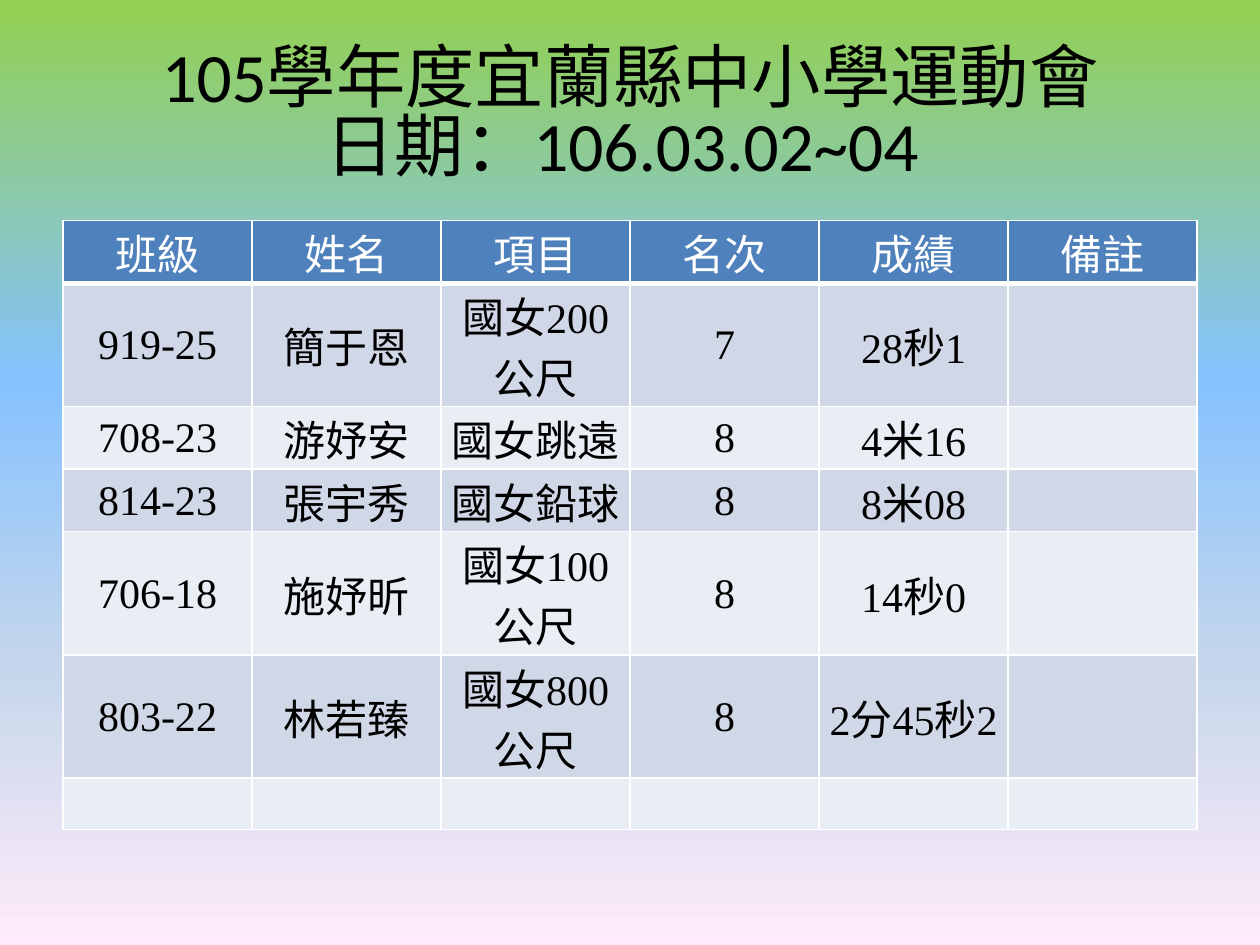
from lxml.etree import SubElement
from pptx import Presentation
from pptx.dml.color import RGBColor
from pptx.enum.text import MSO_ANCHOR, MSO_AUTO_SIZE, PP_ALIGN
from pptx.oxml import parse_xml
from pptx.oxml.ns import nsdecls, qn
from pptx.util import Cm, Pt

TITLE = ["105學年度宜蘭縣中小學運動會", "日期：106.03.02~04 "]
ROWS = [
    ["班級", "姓名", "項目", "名次", "成績", "備註"],
    ["919-25", "簡于恩", "國女200公尺", "7", "28秒1", ""],
    ["708-23", "游妤安", "國女跳遠", "8", "4米16", ""],
    ["814-23", "張宇秀", "國女鉛球", "8", "8米08", ""],
    ["706-18", "施妤昕", "國女100公尺", "8", "14秒0", ""],
    ["803-22", "林若臻", "國女800公尺", "8", "2分45秒2", ""],
    [""] * 6,
]
STOPS = [(0, "92D050"), (40, "85C2FF"), (70, "C4D6EB"), (100, "FFEBFA")]
HEAD, BANDS = "4F81BD", ["D0D8E8", "E9EDF4"]
WHITE, BLACK = "FFFFFF", "000000"


def color(code):
    return RGBColor.from_string(code)


def add_run(para, text, font, size, code):
    run = para.add_run()
    run.text = text
    run.font.name = font
    run.font.size = Pt(size)
    run.font.color.rgb = color(code)


def set_back(slide):
    fill = slide.background.fill
    fill.gradient()
    fill.gradient_angle = 270
    stops = fill.gradient_stops[0]._gs.getparent()
    for stop in list(stops):
        stops.remove(stop)
    for pos, code in STOPS:
        stop = SubElement(stops, qn("a:gs"), pos=str(pos * 1000))
        SubElement(stop, qn("a:srgbClr"), val=code)


def set_title(slide):
    title = slide.shapes.title
    title.left, title.top = Cm(1.27), Cm(0.76)
    title.width, title.height = Cm(22.86), Cm(3.18)
    frame = title.text_frame
    frame.word_wrap = True
    frame.auto_size = MSO_AUTO_SIZE.NONE
    frame.vertical_anchor = MSO_ANCHOR.MIDDLE
    para = frame.paragraphs[0]
    para.alignment = PP_ALIGN.CENTER
    para.line_spacing = 0.83
    for i, line in enumerate(TITLE):
        if i:
            para.add_line_break()
        add_run(para, line, "Calibri", 39.6, BLACK)


def set_edges(cell, top, base):
    props = cell._tc.get_or_add_tcPr()
    for i, (side, width) in enumerate(zip("LRTB", [1, 1, top, base])):
        props.insert(i, parse_xml(
            f'<a:ln{side} {nsdecls("a")} w="{Pt(width)}"><a:solidFill>'
            f'<a:srgbClr val="{WHITE}"/></a:solidFill></a:ln{side}>'))


def set_cell(cell, text, row):
    cell.fill.solid()
    cell.fill.fore_color.rgb = color(BANDS[(row - 1) % 2] if row else HEAD)
    set_edges(cell, 3 if row == 1 else 1, 1 if row else 3)
    if not text:
        return
    cell.margin_left = cell.margin_right = cell.margin_top = Cm(0.03)
    cell.margin_bottom = 0
    cell.vertical_anchor = MSO_ANCHOR.MIDDLE
    para = cell.text_frame.paragraphs[0]
    para.alignment = PP_ALIGN.CENTER
    add_run(para, text, "Times New Roman", 24, BLACK if row else WHITE)
    para.runs[0].font.bold = False


def add_grid(slide):
    high = Cm(1.03)
    grid = slide.shapes.add_table(
        len(ROWS), len(ROWS[0]), Cm(1.27), Cm(4.45),
        Cm(22.86), high * len(ROWS)).table
    for r, line in enumerate(ROWS):
        grid.rows[r].height = high
        for c, text in enumerate(line):
            set_cell(grid.cell(r, c), text, r)


def main():
    deck = Presentation()
    deck.slide_width, deck.slide_height = Cm(25.4), Cm(19.05)
    slide = deck.slides.add_slide(deck.slide_layouts[5])
    set_back(slide)
    set_title(slide)
    add_grid(slide)
    deck.save("out.pptx")


if __name__ == "__main__":
    main()
